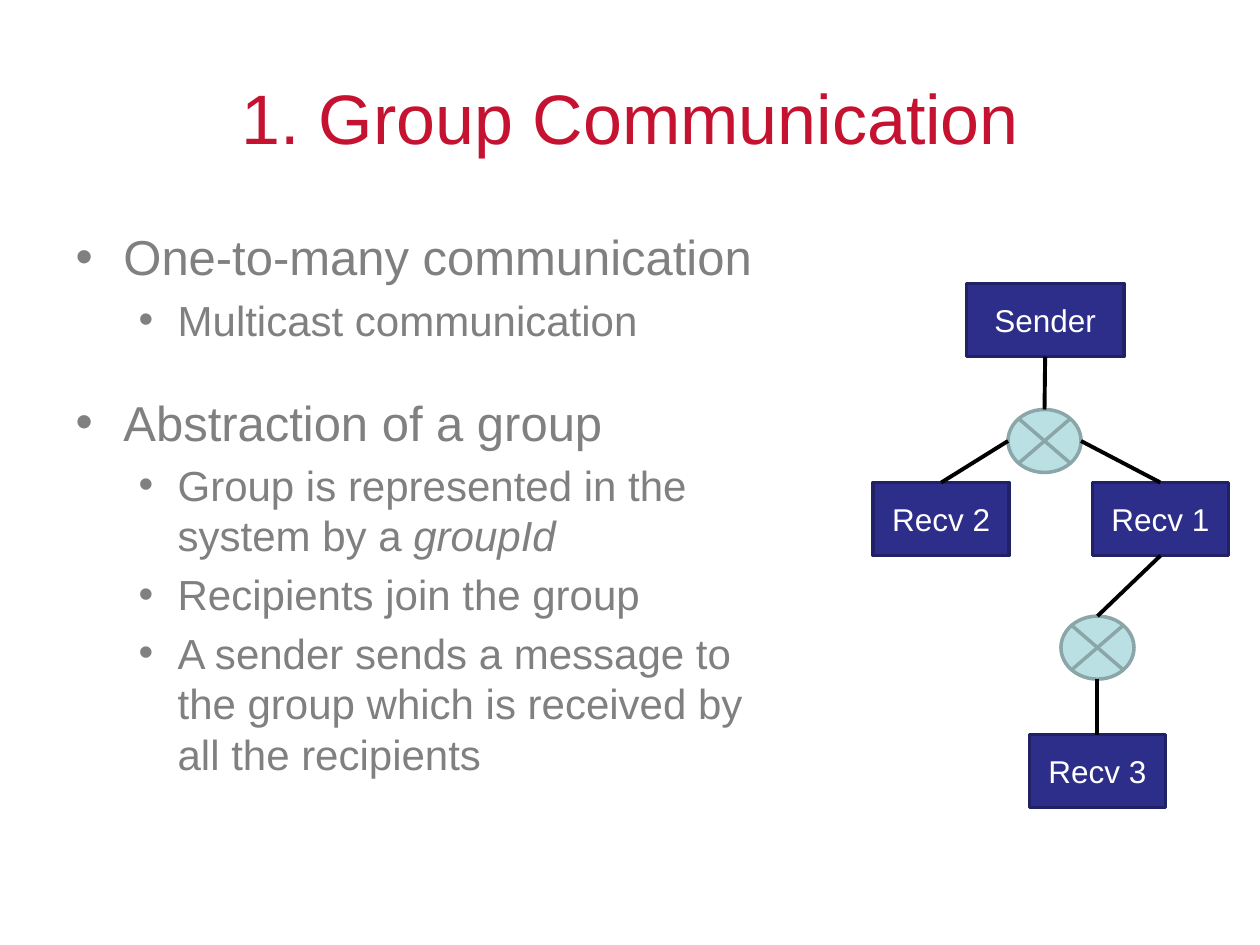
from dataclasses import dataclass

from lxml.etree import SubElement
from pptx import Presentation
from pptx.dml.color import RGBColor
from pptx.enum.shapes import MSO_CONNECTOR, MSO_SHAPE
from pptx.enum.text import MSO_ANCHOR, MSO_AUTO_SIZE, PP_ALIGN
from pptx.oxml.ns import qn
from pptx.util import Inches, Pt


@dataclass(frozen=True)
class Theme:
    """Colours, font and type sizes of the slide."""
    font: str = "Arial"
    title: RGBColor = RGBColor(0xC4, 0x12, 0x30)
    body: RGBColor = RGBColor(0x80, 0x80, 0x80)
    node: RGBColor = RGBColor(0x2D, 0x2D, 0x8A)
    node_line: RGBColor = RGBColor(0x21, 0x21, 0x66)
    node_text: RGBColor = RGBColor(0xFF, 0xFF, 0xFF)
    junction: RGBColor = RGBColor(0xBB, 0xE0, 0xE3)
    junction_line: RGBColor = RGBColor(0x8A, 0xA6, 0xA8)
    link: RGBColor = RGBColor(0, 0, 0)
    title_size: float = 40
    level_sizes: tuple = (28, 24)
    node_size: float = 18
    outline: float = 2
    link_width: float = 2.25


THEME = Theme()
INDENTS = ((0.38, -0.38), (0.81, -0.31))
GROUP_GAP = 27.2
TOPICS = (
    (0, "One-to-many communication", ""),
    (1, "Multicast communication", ""),
    (0, "Abstraction of a group", ""),
    (1, "Group is represented in the system by a ", "groupId"),
    (1, "Recipients join the group", ""),
    (1, "A sender sends a message to the group which is received by all the recipients", ""),
)
NODES = {
    "Sender": (0.74, 0, 1.25),
    "Recv 2": (0, 1.58, 1.08),
    "Recv 1": (1.74, 1.58, 1.08),
    "Recv 3": (1.24, 3.58, 1.08),
}
NODE_HEIGHT = 0.58
JUNCTIONS = {"upper": (1.07, 1), "lower": (1.49, 2.64)}
JUNCTION_SIZE = (0.58, 0.5)
TOP, LEFT, BOTTOM, RIGHT = range(4)
LINKS = (
    ("Sender", BOTTOM, "upper", TOP),
    ("Recv 1", TOP, "upper", RIGHT),
    ("Recv 2", TOP, "upper", LEFT),
    ("Recv 3", TOP, "lower", BOTTOM),
    ("Recv 1", BOTTOM, "lower", TOP),
)


def place(shape, box):
    """Move a shape to a box of left, top, width and height in inches."""
    shape.left, shape.top, shape.width, shape.height = map(Inches, box)


def style_font(font, size, colour):
    """Give a font the theme's typeface with a size and a colour."""
    font.name = THEME.font
    font.size = Pt(size)
    font.color.rgb = colour


def add_bullet(para, level):
    """Give a paragraph a round bullet and the indents of its level."""
    left, hanging = INDENTS[level]
    properties = para._p.get_or_add_pPr()
    properties.set("marL", str(Inches(left)))
    properties.set("indent", str(Inches(hanging)))
    SubElement(properties, qn("a:buFont")).set("typeface", THEME.font)
    SubElement(properties, qn("a:buChar")).set("char", "•")


def fill_title(title, box):
    """Write the heading in the title placeholder."""
    place(title, box)
    frame = title.text_frame
    frame.text = "1. Group Communication"
    frame.vertical_anchor = MSO_ANCHOR.MIDDLE
    para = frame.paragraphs[0]
    para.alignment = PP_ALIGN.CENTER
    style_font(para.font, THEME.title_size, THEME.title)


def fill_topics(body, box):
    """Write the two-level list in the body placeholder."""
    place(body, box)
    frame = body.text_frame
    frame.word_wrap = True
    frame.auto_size = MSO_AUTO_SIZE.NONE
    for index, (level, text, emphasis) in enumerate(TOPICS):
        para = frame.add_paragraph() if index else frame.paragraphs[0]
        para.level = level
        add_bullet(para, level)
        size = THEME.level_sizes[level]
        gap = GROUP_GAP if level == 0 else size * 0.2
        para.space_before = Pt(gap if index else 0)
        style_font(para.font, size, THEME.body)
        para.add_run().text = text
        if emphasis:
            span = para.add_run()
            span.text = emphasis
            span.font.italic = True


def add_outlined(page, kind, box, fill, line):
    """Add a flat preset shape with a fill and an outline."""
    shape = page.shapes.add_shape(kind, *map(Inches, box))
    shape.shadow.inherit = False
    shape.fill.solid()
    shape.fill.fore_color.rgb = fill
    shape.line.color.rgb = line
    shape.line.width = Pt(THEME.outline)
    return shape


def add_node(page, label, box):
    """Add a labelled sender or receiver."""
    node = add_outlined(page, MSO_SHAPE.RECTANGLE, box, THEME.node, THEME.node_line)
    frame = node.text_frame
    frame.text = label
    frame.word_wrap = False
    frame.vertical_anchor = MSO_ANCHOR.MIDDLE
    para = frame.paragraphs[0]
    para.alignment = PP_ALIGN.CENTER
    style_font(para.font, THEME.node_size, THEME.node_text)
    return node


def side_point(shape, side):
    """Return the middle of one side of a shape."""
    across = {LEFT: 0, RIGHT: shape.width}.get(side, shape.width // 2)
    down = {TOP: 0, BOTTOM: shape.height}.get(side, shape.height // 2)
    return shape.left + across, shape.top + down


def add_link(page, node, node_side, junction, junction_side):
    """Join a node to a junction with a straight line."""
    link = page.shapes.add_connector(
        MSO_CONNECTOR.STRAIGHT,
        *side_point(node, node_side), *side_point(junction, junction_side))
    link.begin_connect(node, node_side)
    link.line.color.rgb = THEME.link
    link.line.width = Pt(THEME.link_width)
    SubElement(link._element.spPr, qn("a:effectLst"))


def add_network(page, left, top):
    """Draw the multicast tree from its top left corner."""
    parts = {}
    for label, (across, down, width) in NODES.items():
        parts[label] = add_node(page, label, (left + across, top + down, width, NODE_HEIGHT))
    for name, (across, down) in JUNCTIONS.items():
        parts[name] = add_outlined(
            page, MSO_SHAPE.FLOWCHART_SUMMING_JUNCTION,
            (left + across, top + down, *JUNCTION_SIZE),
            THEME.junction, THEME.junction_line)
    for node, node_side, junction, junction_side in LINKS:
        add_link(page, parts[node], node_side, parts[junction], junction_side)


def main():
    """Build the slide and save it."""
    deck = Presentation()
    deck.slide_width, deck.slide_height = Inches(10), Inches(7.5)
    page = deck.slides.add_slide(deck.slide_layouts[1])
    fill_title(page.shapes.title, (0.5, 0.3, 9, 1.25))
    fill_topics(page.placeholders[1], (0.5, 1.75, 5.75, 4.95))
    add_network(page, 6.93, 2.25)
    deck.save("out.pptx")


if __name__ == "__main__":
    main()
